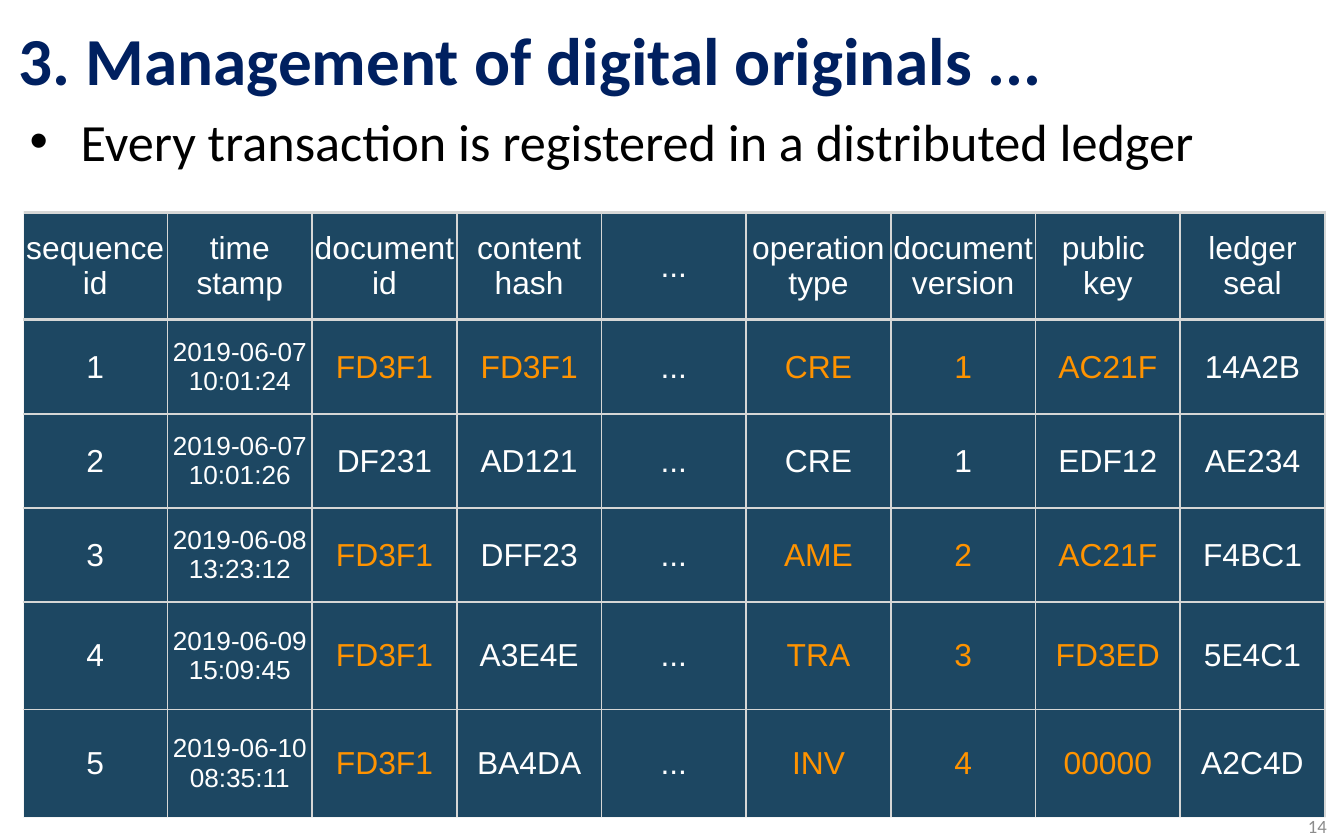
from dataclasses import dataclass

from lxml.etree import SubElement
from pptx import Presentation
from pptx.dml.color import RGBColor
from pptx.enum.text import MSO_ANCHOR, MSO_AUTO_SIZE, PP_ALIGN
from pptx.oxml.ns import qn
from pptx.util import Inches, Pt


@dataclass(frozen=True)
class Theme:
    heading_font: str = "Calibri"
    table_font: str = "Arial"
    title: str = "002060"
    body: str = "000000"
    page: str = "8C8C8C"
    cell: str = "1D4762"
    cell_text: str = "FFFFFF"
    highlight: str = "FF9300"
    grid: str = "D6D7D6"
    edge: str = "F5F5F5"
    title_size: float = 36
    body_size: float = 28
    cell_size: float = 17
    stamp_size: float = 14
    page_size: float = 10


HEADERS = ["sequence id", "time stamp", "document id", "content hash", "...",
           "operation type", "document version", "public \nkey", "ledger seal"]
LEDGER = [
    ["1", "2019-06-07\n10:01:24", "FD3F1", "FD3F1", "...", "CRE", "1", "AC21F", "14A2B"],
    ["2", "2019-06-07\n10:01:26", "DF231", "AD121", "...", "CRE", "1", "EDF12", "AE234"],
    ["3", "2019-06-08\n13:23:12", "FD3F1", "DFF23", "...", "AME", "2", "AC21F", "F4BC1"],
    ["4", "2019-06-09\n15:09:45", "FD3F1", "A3E4E", "...", "TRA", "3", "FD3ED", "5E4C1"],
    ["5", "2019-06-10\n08:35:11", "FD3F1", "BA4DA", "...", "INV", "4", "00000", "A2C4D"],
]
ROW_HEIGHTS = [0.8, 0.7, 0.7, 0.7, 0.8, 0.8]
TRACKED_DOCUMENT = "FD3F1"
STAMP_COLUMN, DOCUMENT_COLUMN = 1, 2
TRACKED_COLUMNS = {2, 5, 6, 7}


def set_all(target, values):
    for name, value in values.items():
        setattr(target, name, value)


def is_highlighted(record, column):
    """Mark the tracked document's life cycle and every use of its id."""
    follows = record[DOCUMENT_COLUMN] == TRACKED_DOCUMENT and column in TRACKED_COLUMNS
    return follows or record[column] == TRACKED_DOCUMENT


class SlideBuilder:
    def __init__(self, slide, theme):
        self.slide = slide
        self.theme = theme

    def fill_text(self, frame, text, font, size, color, bold=False, align=PP_ALIGN.LEFT):
        frame.text = text
        for paragraph in frame.paragraphs:
            set_all(paragraph, {"alignment": align, "space_before": Pt(0)})
            for run in paragraph.runs:
                set_all(run.font, {"name": font, "size": Pt(size), "bold": bold})
                run.font.color.rgb = RGBColor.from_string(color)

    def place(self, shape, left, top, width, height, anchor):
        set_all(shape, {"left": Inches(left), "top": Inches(top),
                        "width": Inches(width), "height": Inches(height)})
        set_all(shape.text_frame, {"word_wrap": True, "vertical_anchor": anchor,
                                   "auto_size": MSO_AUTO_SIZE.NONE})

    def title(self, text, *box):
        heading = self.slide.shapes.title
        self.place(heading, *box, MSO_ANCHOR.MIDDLE)
        self.fill_text(heading.text_frame, text, self.theme.heading_font,
                       self.theme.title_size, self.theme.title, bold=True)

    def bullet(self, text, *box):
        statement = self.slide.placeholders[1]
        self.place(statement, *box, MSO_ANCHOR.TOP)
        self.fill_text(statement.text_frame, text, self.theme.heading_font,
                       self.theme.body_size, self.theme.body)
        properties = statement.text_frame.paragraphs[0]._p.get_or_add_pPr()
        properties.set("marL", str(Inches(0.38)))
        properties.set("indent", str(-Inches(0.38)))
        SubElement(properties, qn("a:buFont")).set("typeface", "Arial")
        SubElement(properties, qn("a:buChar")).set("char", "•")

    def page_number(self, text, *box):
        page = self.slide.shapes.add_textbox(0, 0, 0, 0)
        self.place(page, *box, MSO_ANCHOR.MIDDLE)
        self.fill_text(page.text_frame, text, self.theme.heading_font,
                       self.theme.page_size, self.theme.page, align=PP_ALIGN.RIGHT)

    def borders(self, cell, sides):
        """Draw the (colour, points) pairs, given in left, right, top, bottom order."""
        properties = cell._tc.get_or_add_tcPr()
        for position, (side, (color, points)) in enumerate(zip("LRTB", sides)):
            line = SubElement(properties, qn(f"a:ln{side}"))
            line.set("w", str(Pt(points)))
            fill = SubElement(line, qn("a:solidFill"))
            SubElement(fill, qn("a:srgbClr")).set("val", color)
            properties.insert(position, line)

    def cell(self, cell, text, size, color, sides):
        set_all(cell, {"margin_left": 0, "margin_right": 0, "margin_top": 0,
                       "margin_bottom": 0, "vertical_anchor": MSO_ANCHOR.MIDDLE})
        cell.fill.solid()
        cell.fill.fore_color.rgb = RGBColor.from_string(self.theme.cell)
        self.borders(cell, sides)
        self.fill_text(cell.text_frame, text, self.theme.table_font, size, color,
                       align=PP_ALIGN.CENTER)

    def ledger(self, records, heights, left, top, width):
        theme = self.theme
        table = self.slide.shapes.add_table(
            len(records), len(records[0]), Inches(left), Inches(top),
            Inches(width), Inches(sum(heights))).table
        thin, thick, edge = (theme.grid, 1), (theme.grid, 2), (theme.edge, 0.25)
        last = len(records) - 1
        for r, (record, height) in enumerate(zip(records, heights)):
            table.rows[r].height = Inches(height)
            for c, text in enumerate(record):
                stamped = r > 0 and c == STAMP_COLUMN
                sides = (edge if c == 0 else thin,
                         thin,
                         thick if r < 2 else thin,
                         thick if r == 0 else edge if r == last else thin)
                self.cell(table.cell(r, c), text,
                          theme.stamp_size if stamped else theme.cell_size,
                          theme.highlight if is_highlighted(record, c) else theme.cell_text,
                          sides)


def main():
    presentation = Presentation()
    set_all(presentation, {"slide_width": Inches(10), "slide_height": Inches(6.25)})
    slide = presentation.slides.add_slide(presentation.slide_layouts[1])
    builder = SlideBuilder(slide, Theme())
    builder.title("3. Management of digital originals ...", 0.04, 0.03, 9.92, 0.81)
    builder.bullet("Every transaction is registered in a distributed ledger",
                   0.12, 0.76, 9.76, 0.58)
    builder.ledger([HEADERS, *LEDGER], ROW_HEIGHTS, 0.17, 1.58, 9.69)
    builder.page_number("14", 7.64, 6.04, 2.33, 0.21)
    presentation.save("out.pptx")


if __name__ == "__main__":
    main()
